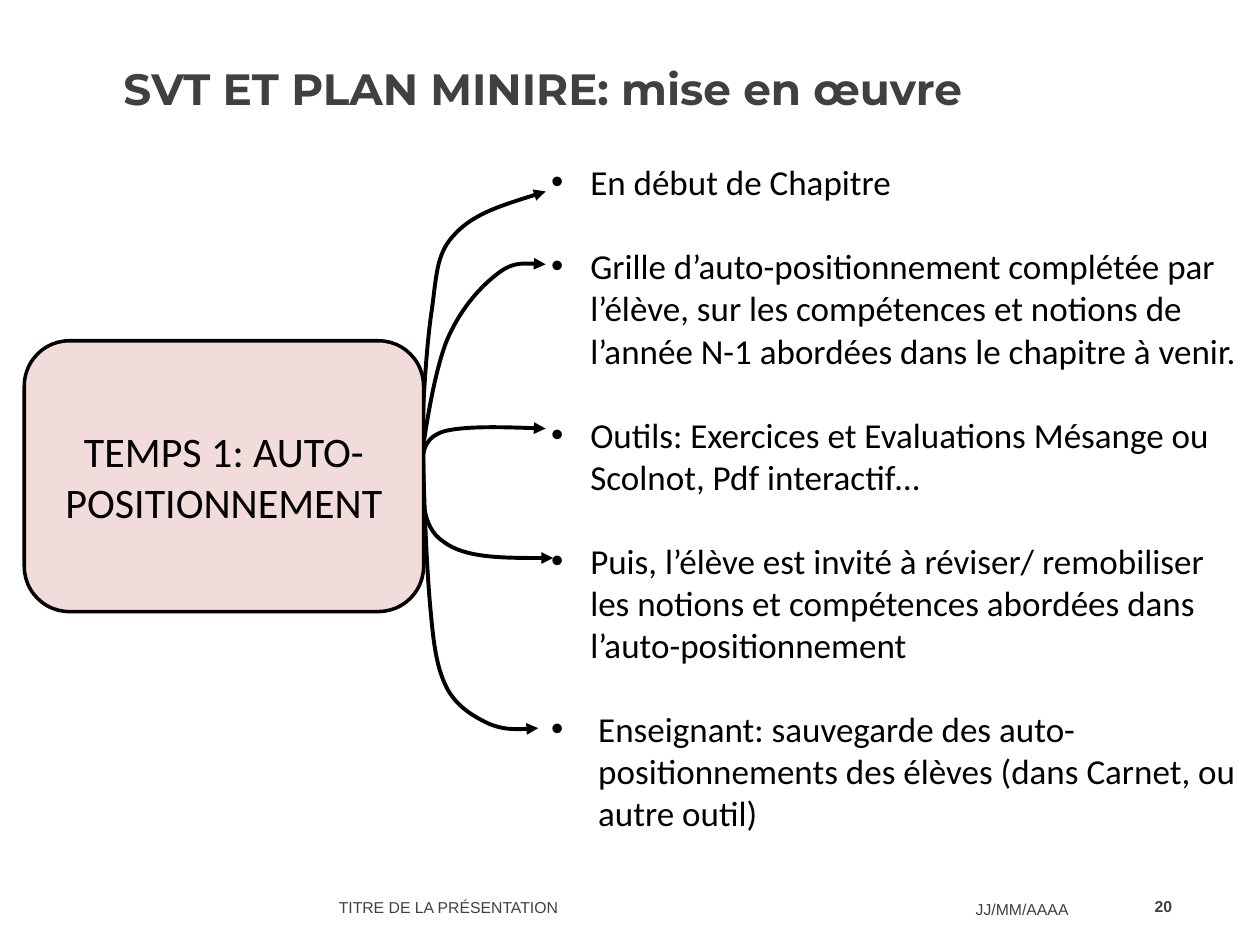
"""Build the slide on self-assessment at the start of a chapter."""
from dataclasses import dataclass

from lxml import etree
from pptx import Presentation
from pptx.dml.color import RGBColor
from pptx.enum.shapes import MSO_SHAPE
from pptx.enum.text import MSO_ANCHOR, PP_ALIGN
from pptx.oxml.ns import qn
from pptx.shapes.autoshape import Shape
from pptx.slide import Slide
from pptx.text.text import TextFrame, _Paragraph
from pptx.util import Cm, Pt

ROUND = MSO_SHAPE.ROUNDED_RECTANGLE
TOP, MIDDLE = MSO_ANCHOR.TOP, MSO_ANCHOR.MIDDLE
LEFT, CENTER, RIGHT = PP_ALIGN.LEFT, PP_ALIGN.CENTER, PP_ALIGN.RIGHT

Point = tuple[float, float]


@dataclass(frozen=True)
class Theme:
    """Colours, fonts and sizes of the slide."""
    ink: RGBColor = RGBColor(0, 0, 0)
    grey: RGBColor = RGBColor(0x40, 0x40, 0x40)
    rose: RGBColor = RGBColor(0xF2, 0xDC, 0xDB)
    head: str = "Montserrat"
    body: str = "Calibri"
    foot: str = "Arial"
    title: int = 25
    step: int = 24
    item: int = 20
    note: int = 9
    gap: int = 24
    curve: float = 2.25
    edge: float = 2


@dataclass(frozen=True)
class Label:
    """A grey line of text, with its box and insets in centimetres."""
    text: str
    box: tuple[float, float, float, float]
    font: str
    size: int
    bold: bool = False
    align: PP_ALIGN = LEFT
    top: float = 0.13
    base: float = 0.13


@dataclass(frozen=True)
class Item:
    """A bullet and its hanging indent in centimetres."""
    text: str
    indent: float = 0.79


THEME = Theme()

LABELS = (
    Label("TITRE DE LA PRÉSENTATION", (6.58, 17.07, 9.86, 1.88), THEME.foot, THEME.note, top=0.68),
    Label("JJ/MM/AAAA", (19.42, 17.75, 3.23, 1.02), THEME.foot, THEME.note, top=0.25),
    Label("SVT ET PLAN MINIRE: mise en œuvre", (2.24, 0.51, 21.89, 3.58),
          THEME.head, THEME.title, True, base=1.2),
    Label("20", (22.64, 17.75, 1.24, 1.02), THEME.foot, THEME.note, True, RIGHT),
)

ITEMS = (
    Item("En début de Chapitre"),
    Item("Grille d’auto-positionnement complétée par l’élève, sur les compétences "
         "et notions de l’année N-1 abordées dans le chapitre à venir."),
    Item("Outils: Exercices et Evaluations Mésange ou Scolnot, Pdf interactif…"),
    Item("Puis, l’élève est invité à réviser/ remobiliser les notions et "
         "compétences abordées dans l’auto-positionnement"),
    Item("Enseignant: sauvegarde des auto-positionnements des élèves "
         "(dans Carnet, ou autre outil)", 0.95),
)

CURVES: tuple[tuple[Point, ...], ...] = (
    ((8.48, 9.3), (8.53, 8.15), (8.59, 6.99), (8.71, 6.22), (8.81, 5.46),
     (8.81, 5.08), (9.19, 4.7), (9.58, 4.29), (10.29, 4.09), (11, 3.86)),
    ((8.48, 9.35), (8.61, 8.43), (8.76, 7.54), (8.99, 6.91), (9.25, 6.27),
     (9.65, 5.82), (9.98, 5.56), (10.31, 5.28), (10.67, 5.31), (11, 5.33)),
    ((8.51, 9.35), (8.53, 9.09), (8.56, 8.81), (8.97, 8.69), (9.4, 8.59),
     (10.19, 8.61), (11, 8.64)),
    ((8.53, 9.32), (8.51, 9.96), (8.48, 10.62), (8.94, 10.92), (9.37, 11.25),
     (10.26, 11.25), (11.15, 11.25)),
    ((8.53, 9.22), (8.56, 10.41), (8.61, 11.61), (8.69, 12.4), (8.76, 13.18),
     (8.84, 13.54), (9.02, 13.89), (9.22, 14.25), (9.53, 14.43), (9.83, 14.58),
     (10.13, 14.71), (10.49, 14.71), (10.85, 14.68)),
)


def write(para: _Paragraph, text: str, font: str, size: int,
          color: RGBColor, bold: bool = False) -> None:
    """Add one styled run."""
    run = para.add_run()
    run.text = text
    run.font.name = font
    run.font.size = Pt(size)
    run.font.bold = bold
    run.font.color.rgb = color


def frame(shape: Shape, anchor: MSO_ANCHOR) -> TextFrame:
    """Return the wrapped text frame of a shape."""
    body = shape.text_frame
    body.word_wrap = True
    body.vertical_anchor = anchor
    return body


def draw_label(slide: Slide, label: Label) -> None:
    """Draw a title or footer line."""
    body = frame(slide.shapes.add_textbox(*map(Cm, label.box)), MIDDLE)
    body.margin_top, body.margin_bottom = Cm(label.top), Cm(label.base)
    para = body.paragraphs[0]
    para.alignment = label.align
    write(para, label.text, label.font, label.size, THEME.grey, label.bold)


def draw_list(slide: Slide, items: tuple[Item, ...]) -> None:
    """Draw the bullets, one line apart."""
    box = slide.shapes.add_textbox(Cm(10.86), Cm(3.12), Cm(14.55), Cm(13.79))
    body = frame(box, TOP)
    for rank, item in enumerate(items):
        para = body.add_paragraph() if rank else body.paragraphs[0]
        para.space_before = Pt(THEME.gap if rank else 0)
        props = para._p.get_or_add_pPr()
        props.set("marL", str(Cm(item.indent)))
        props.set("indent", str(-Cm(item.indent)))
        etree.SubElement(props, qn("a:buFont"), typeface=THEME.foot)
        etree.SubElement(props, qn("a:buChar"), char="•")
        write(para, item.text, THEME.body, THEME.item, THEME.ink)


def bend(shape: Shape) -> None:
    """Turn each three straight legs of a freeform into one cubic curve."""
    legs = list(shape.element.iter(qn("a:lnTo")))
    for first in range(0, len(legs), 3):
        trio = legs[first:first + 3]
        cubic = etree.Element(qn("a:cubicBezTo"))
        trio[0].addprevious(cubic)
        for leg in trio:
            cubic.append(leg[0])
            leg.getparent().remove(leg)


def draw_curve(slide: Slide, knots: tuple[Point, ...]) -> None:
    """Draw a curved arrow."""
    start, *rest = [(Cm(x), Cm(y)) for x, y in knots]
    pen = slide.shapes.build_freeform(*start)
    pen.add_line_segments(rest, close=False)
    shape = pen.convert_to_shape()
    bend(shape)
    shape.shadow.inherit = False
    shape.fill.background()
    shape.line.color.rgb = THEME.ink
    shape.line.width = Pt(THEME.curve)
    line = shape.element.spPr.find(qn("a:ln"))
    etree.SubElement(line, qn("a:tailEnd"), type="triangle")


def draw_step(slide: Slide, text: str) -> None:
    """Draw the rounded box from which the arrows leave."""
    shape = slide.shapes.add_shape(ROUND, Cm(0.49), Cm(6.87), Cm(8.05), Cm(5.46))
    shape.shadow.inherit = False
    shape.fill.solid()
    shape.fill.fore_color.rgb = THEME.rose
    shape.line.color.rgb = THEME.ink
    shape.line.width = Pt(THEME.edge)
    para = frame(shape, MIDDLE).paragraphs[0]
    para.alignment = CENTER
    write(para, text, THEME.body, THEME.step, THEME.ink)


def main() -> None:
    """Build and save the deck."""
    deck = Presentation()
    deck.slide_width, deck.slide_height = Cm(25.4), Cm(19.05)
    slide = deck.slides.add_slide(deck.slide_layouts[6])
    for label in LABELS:
        draw_label(slide, label)
    draw_list(slide, ITEMS)
    for knots in CURVES:
        draw_curve(slide, knots)
    draw_step(slide, "TEMPS 1: AUTO-POSITIONNEMENT")
    deck.save("out.pptx")


if __name__ == "__main__":
    main()
